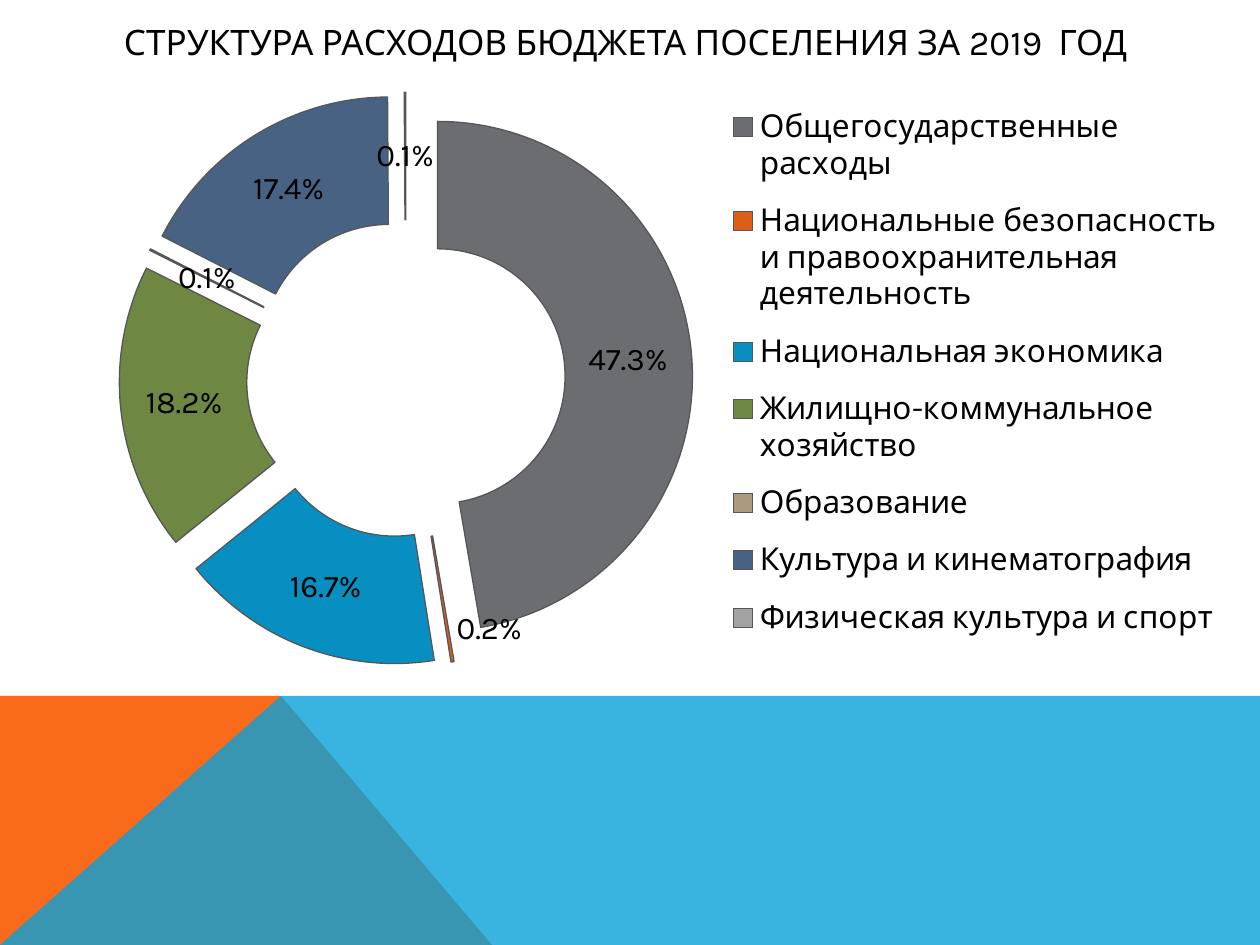
from dataclasses import dataclass

from lxml.etree import SubElement
from pptx import Presentation
from pptx.chart.data import CategoryChartData
from pptx.dml.color import RGBColor
from pptx.enum.chart import XL_CHART_TYPE as Kind, XL_LEGEND_POSITION as Side
from pptx.enum.text import MSO_ANCHOR as Anchor, PP_ALIGN as Align
from pptx.oxml import parse_xml
from pptx.oxml.ns import nsdecls, qn
from pptx.util import Pt

SCALE = 914400 / 126
FONT = "Karla"
HUES = {
    "text": "000000", "edge": "55565A", "flame": "F96A1B", "sky": "08A1D9",
    "gray": "6B6D70", "rust": "DD5E17", "blue": "078FC1", "green": "6E8742",
    "tan": "AC9A7D", "navy": "476283", "light": "A3A3A3",
}


@dataclass
class Band:
    spots: list[tuple[int, int]]
    hue: str
    alpha: int = 100


@dataclass
class Slice:
    name: str
    share: float
    hue: str


BANDS = [
    Band([(0, 945), (0, 696), (281, 696), (492, 945)], "flame"),
    Band([(0, 945), (281, 696), (1260, 696), (1260, 945)], "sky", 80),
]
SLICES = [
    Slice("Общегосударственные расходы", 47.3, "gray"),
    Slice("Национальные безопасность и правоохранительная деятельность", 0.2, "rust"),
    Slice("Национальная экономика", 16.7, "blue"),
    Slice("Жилищно-коммунальное хозяйство", 18.2, "green"),
    Slice("Образование", 0.1, "tan"),
    Slice("Культура и кинематография", 17.4, "navy"),
    Slice("Физическая культура и спорт", 0.1, "light"),
]


def px(num: int) -> int:
    return round(num * SCALE)


def color(name: str) -> RGBColor:
    return RGBColor.from_string(HUES[name])


def style(font, size: int) -> None:
    font.name, font.size, font.bold = FONT, Pt(size), False
    font.color.rgb = color("text")


def draw_band(slide, band: Band) -> None:
    pen = slide.shapes.build_freeform(*band.spots[0], scale=SCALE)
    pen.add_line_segments(band.spots[1:], close=True)
    shape = pen.convert_to_shape()
    shape.shadow.inherit = False
    shape.line.fill.background()
    shape.fill.solid()
    shape.fill.fore_color.rgb = color(band.hue)
    if band.alpha < 100:
        tint = shape.fill._xPr.find(".//" + qn("a:srgbClr"))
        SubElement(tint, qn("a:alpha")).set("val", str(band.alpha * 1000))


def place(owner, x: float, y: float, w: float, h: float, inner: bool = False):
    """Build a manual layout in shares of the chart area."""
    for old in owner.findall(qn("c:layout")):
        owner.remove(old)
    target = '<c:layoutTarget val="inner"/>' if inner else ""
    return parse_xml(
        f'<c:layout {nsdecls("c")}><c:manualLayout>{target}'
        f'<c:xMode val="edge"/><c:yMode val="edge"/><c:x val="{x}"/><c:y val="{y}"/>'
        f'<c:w val="{w}"/><c:h val="{h}"/></c:manualLayout></c:layout>')


def shift_label(labels, index: int, x: float, y: float) -> None:
    flags = "".join(
        f'<c:show{key} val="{int(key == "Percent")}"/>'
        for key in ("LegendKey", "Val", "CatName", "SerName", "Percent", "BubbleSize"))
    labels._element.insert(0, parse_xml(
        f'<c:dLbl {nsdecls("c")}><c:idx val="{index}"/><c:layout><c:manualLayout>'
        f'<c:x val="{x}"/><c:y val="{y}"/></c:manualLayout></c:layout>'
        f'<c:numFmt formatCode="0.0%" sourceLinked="0"/>{flags}</c:dLbl>'))


def draw_title(slide, text: str) -> None:
    title = slide.shapes.title
    title.left, title.top, title.width, title.height = map(px, (35, 16, 1181, 50))
    frame = title.text_frame
    frame.vertical_anchor = Anchor.MIDDLE
    para = frame.paragraphs[0]
    para.alignment = Align.CENTER
    run = para.add_run()
    run.text = text
    style(run.font, 20)


def draw_chart(slide, slices: list[Slice]) -> None:
    data = CategoryChartData(number_format="0.0")
    data.categories = [part.name for part in slices]
    data.add_series("Series 1", [part.share for part in slices])
    chart = slide.shapes.add_chart(
        Kind.DOUGHNUT_EXPLODED, *map(px, (54, 76, 1181, 605)), data).chart
    chart.has_title = False
    style(chart.font, 18)

    # Ring
    area = chart._chartSpace.chart.plotArea
    area.insert(0, place(area, 0.027, 0.027, 0.542, 0.948, True))
    ring = chart.plots[0].series[0]
    for i, part in enumerate(slices):
        form = ring.points[i].format
        form.fill.solid()
        form.fill.fore_color.rgb = color(part.hue)
        form.line.color.rgb = color("edge")
        form.line.width = Pt(0.75)

    # Percent labels
    labels = ring.data_labels
    labels.show_percentage, labels.show_value = True, False
    labels.number_format, labels.number_format_is_linked = "0.0%", False
    style(labels.font, 18)
    shift_label(labels, 1, 0.04, 0.05)

    # Legend
    chart.has_legend = True
    legend = chart.legend
    legend.position, legend.include_in_layout = Side.RIGHT, False
    style(legend.font, 18)
    box = legend._element
    spot = place(box, 0.57, 0.02, 0.42, 0.94)
    box.find(qn("c:legendPos")).addnext(spot)


def main() -> None:
    deck = Presentation()
    deck.slide_width, deck.slide_height = px(1260), px(945)
    slide = deck.slides.add_slide(deck.slide_layouts[5])
    for band in BANDS:
        draw_band(slide, band)
    draw_title(slide, "СТРУКТУРА РАСХОДОВ БЮДЖЕТА ПОСЕЛЕНИЯ ЗА 2019  ГОД")
    draw_chart(slide, SLICES)
    deck.save("out.pptx")


if __name__ == "__main__":
    main()
